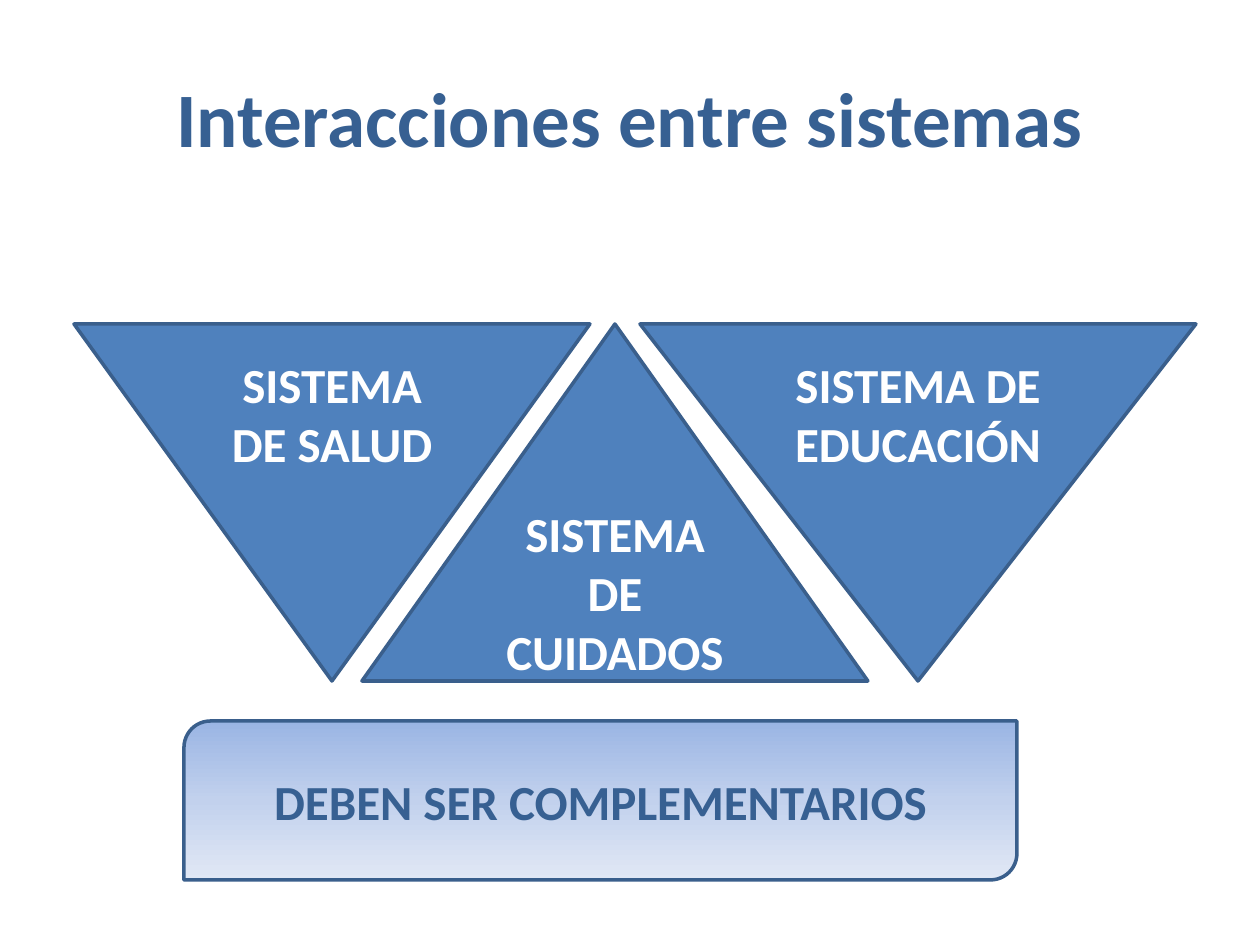
from copy import deepcopy
from dataclasses import dataclass

from pptx import Presentation, util as u
from pptx.dml.color import RGBColor
from pptx.enum import shapes, text
from pptx.oxml.ns import qn

PX = 914400 / 126


@dataclass(frozen=True)
class Theme:
    """Colours, font and type sizes of the slide."""
    font: str = "Calibri"
    ink: str = "376092"
    light: str = "FFFFFF"
    fill: str = "4F81BD"
    edge: str = "3A5F8C"
    shades: tuple = ((0, "9AB5E4"), (0.5, "C2D1ED"), (1, "E1E8F5"))
    title_size: int = 44
    label_size: int = 28
    edge_width: int = 2


THEME = Theme()


def emu(box):
    """Turn a box in px into EMU lengths."""
    return [u.Emu(round(length * PX)) for length in box]


def write(holder, wording, size, colour):
    """Write one bold, centred paragraph in the middle of a holder."""
    frame = holder.text_frame
    for key, value in {"word_wrap": True, "vertical_anchor": text.MSO_ANCHOR.MIDDLE}.items():
        setattr(frame, key, value)
    line = frame.paragraphs[0]
    line.alignment = text.PP_ALIGN.CENTER
    run = line.add_run()
    run.text = wording
    for key, value in {"name": THEME.font, "size": u.Pt(size), "bold": True}.items():
        setattr(run.font, key, value)
    run.font.color.rgb = RGBColor.from_string(colour)


def add_panel(slide, kind, box, wording, colour):
    """Add an outlined, labelled shape with the plain fill."""
    panel = slide.shapes.add_shape(kind, *emu(box))
    panel.shadow.inherit = False
    panel.fill.solid()
    panel.fill.fore_color.rgb = RGBColor.from_string(THEME.fill)
    panel.line.color.rgb = RGBColor.from_string(THEME.edge)
    panel.line.width = u.Pt(THEME.edge_width)
    write(panel, wording, THEME.label_size, colour)
    return panel


def add_title(slide, box):
    """Place the heading in its box."""
    heading = slide.shapes.add_textbox(*emu(box))
    write(heading, "Interacciones entre sistemas", THEME.title_size, THEME.ink)


def add_systems(slide, box):
    """Place the three interlocking triangles across the box."""
    left, top, width, height = box
    upright = shapes.MSO_SHAPE.ISOSCELES_TRIANGLE
    inverted = shapes.MSO_SHAPE.FLOWCHART_MERGE
    systems = (
        (upright, 288, 506, "SISTEMA DE CUIDADOS"),
        (inverted, 0, 516, "SISTEMA DE SALUD"),
        (inverted, width - 556, 556, "SISTEMA DE EDUCACIÓN"),
    )
    for kind, offset, base, wording in systems:
        add_panel(slide, kind, (left + offset, top, base, height), wording, THEME.light)


def add_conclusion(slide, box):
    """Place the shaded conclusion panel in its box."""
    conclusion = add_panel(slide, shapes.MSO_SHAPE.ROUND_2_DIAG_RECTANGLE, box,
                           "DEBEN SER COMPLEMENTARIOS", THEME.ink)
    conclusion.fill.gradient()
    conclusion.fill.gradient_angle = 270
    stop_list = next(conclusion.element.iter(qn("a:gsLst")))
    stop_list.append(deepcopy(stop_list[0]))
    for stop, (position, colour) in zip(conclusion.fill.gradient_stops, THEME.shades):
        stop.position = position
        stop.color.rgb = RGBColor.from_string(colour)


def main():
    """Build and save the slide."""
    deck = Presentation()
    deck.slide_width, deck.slide_height = emu((1260, 945))
    slide = deck.slides.add_slide(deck.slide_layouts[6])
    add_title(slide, (63, 38, 1134, 157))
    add_systems(slide, (74, 324, 1122, 357))
    add_conclusion(slide, (184, 721, 833, 159))
    deck.save("out.pptx")


if __name__ == "__main__":
    main()
